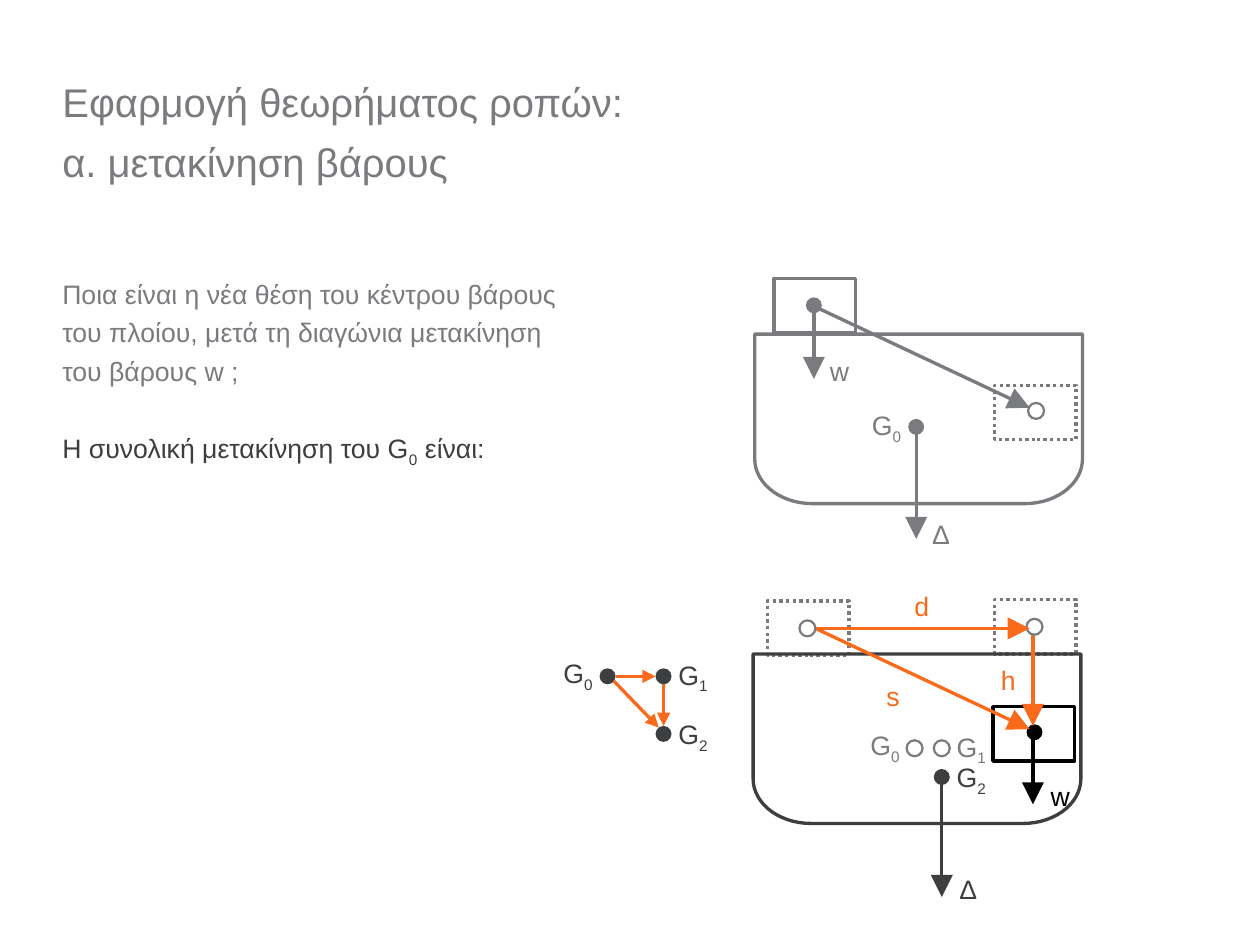
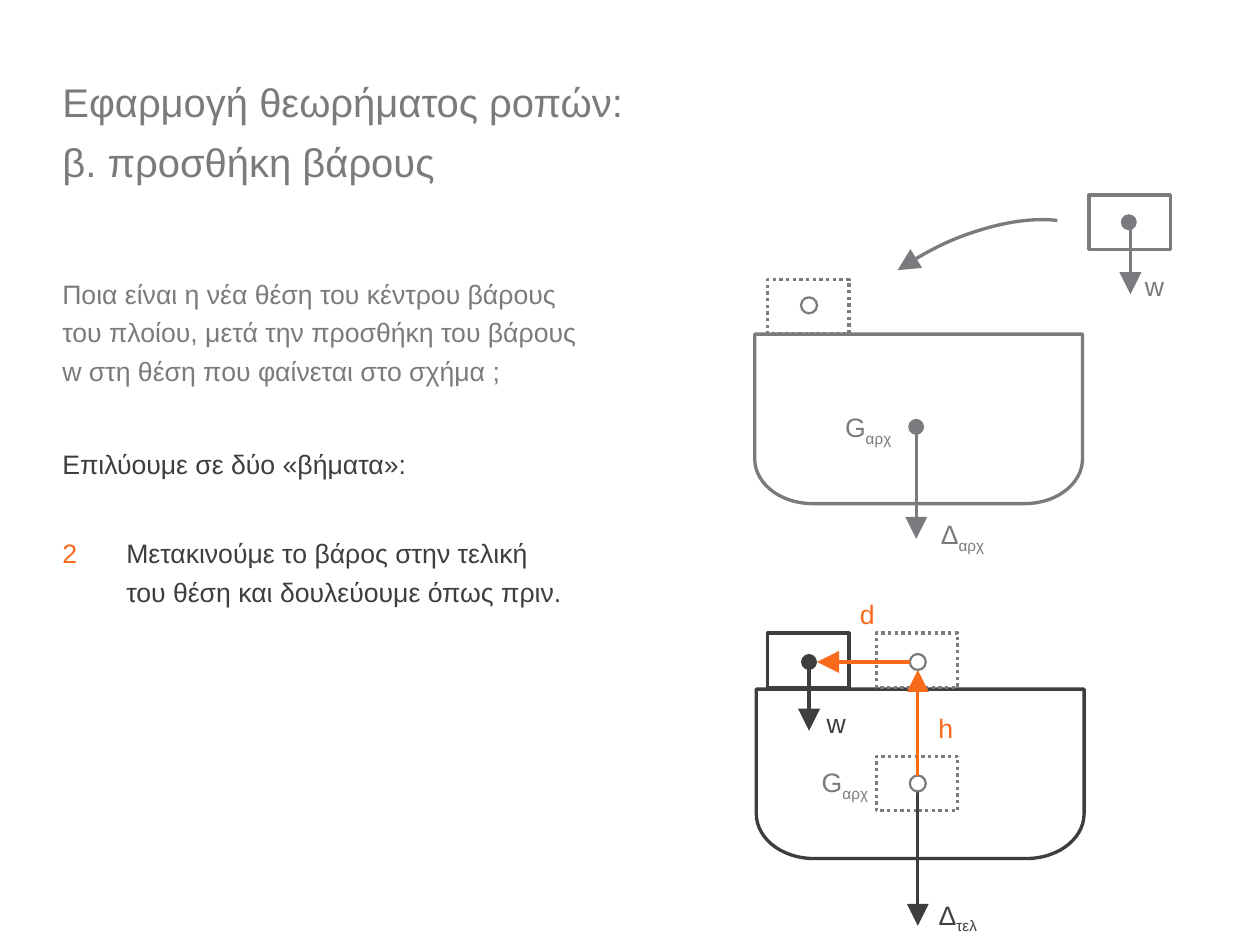
from dataclasses import dataclass
from functools import singledispatch
from math import cos, radians, sin

from pptx import Presentation
from pptx.dml.color import RGBColor
from pptx.enum.dml import MSO_LINE
from pptx.enum.shapes import MSO_CONNECTOR, MSO_SHAPE
from pptx.enum.text import MSO_ANCHOR as Anchor, MSO_AUTO_SIZE, PP_ALIGN as Align
from pptx.oxml.ns import qn
from pptx.oxml.xmlchemy import OxmlElement
from pptx.slide import Slide
from pptx.text.text import _Paragraph as Paragraph
from pptx.util import Inches, Pt


@dataclass(frozen=True)
class Theme:
    font: str = "Arial"
    grey: str = "797B7E"
    dark: str = "3C3E3F"
    black: str = "000000"
    white: str = "FFFFFF"
    accent: str = "F96A1B"
    title_size: float = 18
    body_size: float = 12
    stroke: float = 1.5
    rim: float = 1


THEME = Theme()
MARGIN = 0.39
BODY_WIDTH = 3.23
CRATE_SIZE = (0.51, 0.34)
POINT_SIZE = 0.1
HULL_SIZE = (2.05, 1.06)
BILGE = (0.36, 0.28)
MARKER_INDENT = 0.4


@dataclass(frozen=True)
class Hull:
    x: float
    y: float
    color: str = THEME.grey


@dataclass(frozen=True)
class Crate:
    x: float
    y: float
    color: str = THEME.grey
    dotted: bool = False
    filled: bool = False


@dataclass(frozen=True)
class Point:
    x: float
    y: float
    color: str = THEME.grey
    hollow: bool = False


@dataclass(frozen=True)
class Arrow:
    start: tuple[float, float]
    end: tuple[float, float]
    color: str = THEME.grey
    head: str = "lg"


@dataclass(frozen=True)
class Swing:
    x: float
    y: float
    width: float
    height: float
    rotation: float
    sweep: tuple[float, float]


@dataclass(frozen=True)
class Label:
    text: str
    x: float
    y: float
    width: float = 0.33
    height: float = 0.3
    color: str = THEME.grey


def rgb(color: str) -> RGBColor:
    return RGBColor.from_string(color)


def style(shape, fill: str | None, stroke: str | None, width: float = THEME.stroke) -> None:
    shape.shadow.inherit = False
    if fill:
        shape.fill.solid()
        shape.fill.fore_color.rgb = rgb(fill)
    else:
        shape.fill.background()
    if stroke:
        shape.line.color.rgb = rgb(stroke)
        shape.line.width = Pt(width)
    else:
        shape.line.fill.background()


def add_arrowhead(shape, end: str, size: str) -> None:
    head = OxmlElement(f"a:{end}")
    for key, value in (("type", "triangle"), ("w", size), ("len", size)):
        head.set(key, value)
    shape.element.spPr.find(qn("a:ln")).append(head)


def number_paragraph(paragraph: Paragraph, number: int) -> None:
    properties = paragraph._p.get_or_add_pPr()
    properties.set("marL", str(Inches(MARKER_INDENT)))
    properties.set("indent", str(-Inches(MARKER_INDENT)))
    marker_color = OxmlElement("a:buClr")
    swatch = OxmlElement("a:srgbClr")
    swatch.set("val", THEME.accent)
    marker_color.append(swatch)
    marker_font = OxmlElement("a:buFont")
    marker_font.set("typeface", THEME.font)
    numbering = OxmlElement("a:buAutoNum")
    numbering.set("type", "arabicPlain")
    numbering.set("startAt", str(number))
    for part in (marker_color, marker_font, numbering):
        properties.append(part)


def add_text(slide: Slide, text: str, x: float, y: float, width: float, height: float, *,
             color: str = THEME.grey, size: float = THEME.body_size, align: Align = Align.LEFT,
             anchor: Anchor = Anchor.TOP, spacing: float = 1.2, inset: float = 0,
             grow: bool = True, number: int | None = None) -> None:
    box = slide.shapes.add_textbox(Inches(x), Inches(y), Inches(width), Inches(height))
    frame = box.text_frame
    frame.word_wrap = True
    frame.auto_size = MSO_AUTO_SIZE.SHAPE_TO_FIT_TEXT if grow else MSO_AUTO_SIZE.NONE
    frame.vertical_anchor = anchor
    frame.margin_left = frame.margin_right = 0
    frame.margin_top = frame.margin_bottom = Inches(inset)
    paragraph = frame.paragraphs[0]
    paragraph.alignment = align
    paragraph.line_spacing = spacing
    if number is not None:
        number_paragraph(paragraph, number)
    for row, line in enumerate(text.split("\n")):
        if row:
            paragraph.add_line_break()
        for order, piece in enumerate(line.split("_")):
            run = paragraph.add_run()
            run.text = piece
            run.font.name = THEME.font
            run.font.size = Pt(size)
            run.font.color.rgb = rgb(color)
            if order % 2:
                run.font._element.set("baseline", "-25000")


@singledispatch
def draw(part, slide: Slide) -> None:
    raise TypeError(part)


@draw.register
def draw_hull(part: Hull, slide: Slide) -> None:
    right, bottom = part.x + HULL_SIZE[0], part.y + HULL_SIZE[1]
    across, down = BILGE
    outline = [(right, part.y)]
    for center, first in ((right - across, 0), (part.x + across, 90)):
        outline += [(center + across * cos(radians(angle)),
                     bottom - down + down * sin(radians(angle)))
                    for angle in range(first, first + 91, 6)]
    builder = slide.shapes.build_freeform(Inches(part.x), Inches(part.y))
    builder.add_line_segments([(Inches(x), Inches(y)) for x, y in outline], close=True)
    style(builder.convert_to_shape(), None, part.color)


@draw.register
def draw_crate(part: Crate, slide: Slide) -> None:
    width, height = CRATE_SIZE
    crate = slide.shapes.add_shape(MSO_SHAPE.RECTANGLE, Inches(part.x), Inches(part.y),
                                   Inches(width), Inches(height))
    style(crate, THEME.white if part.filled else None, part.color)
    if part.dotted:
        crate.line.dash_style = MSO_LINE.ROUND_DOT


@draw.register
def draw_point(part: Point, slide: Slide) -> None:
    half = POINT_SIZE / 2
    point = slide.shapes.add_shape(MSO_SHAPE.OVAL, Inches(part.x - half), Inches(part.y - half),
                                   Inches(POINT_SIZE), Inches(POINT_SIZE))
    if part.hollow:
        style(point, THEME.white, part.color, THEME.rim)
    else:
        style(point, part.color, None)


@draw.register
def draw_arrow(part: Arrow, slide: Slide) -> None:
    ends = [Inches(value) for value in (*part.start, *part.end)]
    arrow = slide.shapes.add_connector(MSO_CONNECTOR.STRAIGHT, *ends)
    arrow.line.color.rgb = rgb(part.color)
    arrow.line.width = Pt(THEME.stroke)
    add_arrowhead(arrow, "tailEnd", part.head)
    arrow.element.spPr.append(OxmlElement("a:effectLst"))


@draw.register
def draw_swing(part: Swing, slide: Slide) -> None:
    swing = slide.shapes.add_shape(MSO_SHAPE.ARC, Inches(part.x), Inches(part.y),
                                   Inches(part.width), Inches(part.height))
    swing.rotation = part.rotation
    for index, angle in enumerate(part.sweep):
        swing.adjustments[index] = angle * 0.6
    style(swing, None, THEME.grey)
    add_arrowhead(swing, "headEnd", "lg")


@draw.register
def draw_label(part: Label, slide: Slide) -> None:
    add_text(slide, part.text, part.x, part.y, part.width, part.height, color=part.color,
             align=Align.CENTER, anchor=Anchor.MIDDLE)


def add_page(deck, subtitle: str, question: str, diagram: list) -> Slide:
    slide = deck.slides.add_slide(deck.slide_layouts[6])
    add_text(slide, f"Εφαρμογή θεωρήματος ροπών:\n{subtitle}", MARGIN, MARGIN, 7.09, 0.79,
             size=THEME.title_size, anchor=Anchor.MIDDLE, spacing=1.25, grow=False)
    add_text(slide, question, MARGIN, 1.65, BODY_WIDTH, 0.83, inset=0.05)
    for part in diagram:
        draw(part, slide)
    return slide


def g_label(mark: str, x: float, y: float, color: str = THEME.grey, width: float = 0.33) -> Label:
    return Label(f"G_{mark}", x, y, width, 0.22, color)


def w_label(x: float, y: float, color: str = THEME.grey) -> Label:
    return Label("w", x, y, 0.18, 0.24, color)


INITIAL_SHIP = [Hull(4.72, 2.09), Point(5.73, 2.67), Arrow((5.73, 2.62), (5.73, 3.37))]

WEIGHT_MOVED = [
    Crate(4.84, 1.74, filled=True),
    Crate(6.22, 2.41, dotted=True),
    Point(6.48, 2.57, hollow=True),
    *INITIAL_SHIP,
    Arrow((5.1, 1.92), (6.44, 2.55)),
    Point(5.09, 1.91),
    Arrow((5.09, 1.93), (5.09, 2.37)),
    w_label(5.16, 2.18), g_label("0", 5.38, 2.54), Label("Δ", 5.72, 3.17),
    Crate(4.8, 3.76, dotted=True, filled=True),
    Crate(6.22, 3.75, dotted=True),
    Point(5.72, 4.68, hollow=True), Point(5.89, 4.68, hollow=True),
    g_label("0", 5.37, 4.54), g_label("1", 5.91, 4.55),
    Arrow((6.46, 4.59), (6.46, 5.03), THEME.black),
    w_label(6.54, 4.84, THEME.black),
    Crate(6.21, 4.42, THEME.black),
    Point(6.47, 4.58, THEME.black),
    Point(5.89, 4.86, THEME.dark),
    Arrow((5.89, 4.81), (5.89, 5.61), THEME.dark),
    g_label("2", 5.91, 4.74, THEME.dark), Label("Δ", 5.89, 5.39, color=THEME.dark),
    Hull(4.71, 4.09, THEME.dark),
    Arrow((6.46, 3.96), (6.46, 4.54), THEME.accent),
    Point(6.47, 3.92, hollow=True),
    Arrow((5.1, 3.93), (6.44, 3.93), THEME.accent),
    Arrow((5.1, 3.93), (6.44, 4.56), THEME.accent),
    Point(5.05, 3.93, hollow=True),
    Label("d", 5.6, 3.62, color=THEME.accent),
    Label("h", 6.14, 4.08, color=THEME.accent),
    Label("s", 5.42, 4.18, color=THEME.accent),
    Point(3.8, 4.23, THEME.dark), Point(4.15, 4.23, THEME.dark), Point(4.15, 4.59, THEME.dark),
    g_label("0", 3.45, 4.09, THEME.dark), g_label("1", 4.17, 4.1, THEME.dark),
    g_label("2", 4.17, 4.47, THEME.dark),
    Arrow((3.85, 4.23), (4.1, 4.23), THEME.accent, "med"),
    Arrow((4.15, 4.28), (4.15, 4.54), THEME.accent, "med"),
    Arrow((3.84, 4.26), (4.12, 4.55), THEME.accent, "med"),
]

WEIGHT_ADDED = [
    Crate(4.8, 1.75, dotted=True), Point(5.06, 1.91, hollow=True),
    Crate(6.81, 1.22, filled=True), Point(7.06, 1.39),
    Arrow((7.07, 1.4), (7.07, 1.84)), w_label(7.13, 1.65),
    *INITIAL_SHIP,
    g_label("αρχ", 5.19, 2.55, width=0.48), Label("Δ_αρχ", 5.81, 3.18, 0.42),
    Swing(4.78, 1.58, 2.39, 1.3, 326.2, (270, 340.6)),
    Crate(4.8, 3.96, THEME.dark), Crate(5.48, 4.73, dotted=True),
    Hull(4.73, 4.31, THEME.dark),
    Arrow((5.74, 4.92), (5.74, 5.79), THEME.dark),
    Label("Δ_τελ", 5.75, 5.56, 0.48, color=THEME.dark),
    Point(5.74, 4.9, hollow=True), Point(5.06, 4.14, THEME.dark),
    Crate(5.48, 3.96, dotted=True), Point(5.74, 4.14, hollow=True),
    Arrow((5.74, 4.85), (5.74, 4.19), THEME.accent),
    Arrow((5.69, 4.14), (5.11, 4.14), THEME.accent),
    Label("d", 5.26, 3.67, color=THEME.accent),
    Label("h", 5.75, 4.38, color=THEME.accent),
    g_label("αρχ", 5.12, 4.77),
    Arrow((5.06, 4.13), (5.06, 4.57), THEME.dark), w_label(5.14, 4.38, THEME.dark),
]


def main() -> None:
    deck = Presentation()
    deck.slide_width, deck.slide_height = Inches(7.88), Inches(5.91)
    moved = add_page(
        deck, "α. μετακίνηση βάρους",
        "Ποια είναι η νέα θέση του κέντρου βάρους του πλοίου, μετά τη διαγώνια "
        "μετακίνηση του βάρους w ;", WEIGHT_MOVED)
    add_text(moved, "Η συνολική μετακίνηση του G_0_ είναι:", MARGIN, 2.61, BODY_WIDTH, 0.34,
             color=THEME.dark, inset=0.05)
    added = add_page(
        deck, "β. προσθήκη βάρους",
        "Ποια είναι η νέα θέση του κέντρου βάρους του πλοίου, μετά την προσθήκη "
        "του βάρους w στη θέση που φαίνεται στο σχήμα ;", WEIGHT_ADDED)
    add_text(added, "Επιλύουμε σε δύο «βήματα»:", MARGIN, 2.71, BODY_WIDTH, 0.32,
             color=THEME.dark, inset=0.05)
    add_text(added, "Μετακινούμε το βάρος στην τελική\nτου θέση και δουλεύουμε όπως πριν.",
             MARGIN, 3.27, BODY_WIDTH, 0.56, color=THEME.dark, inset=0.05, number=2)
    deck.save("out.pptx")


if __name__ == "__main__":
    main()
